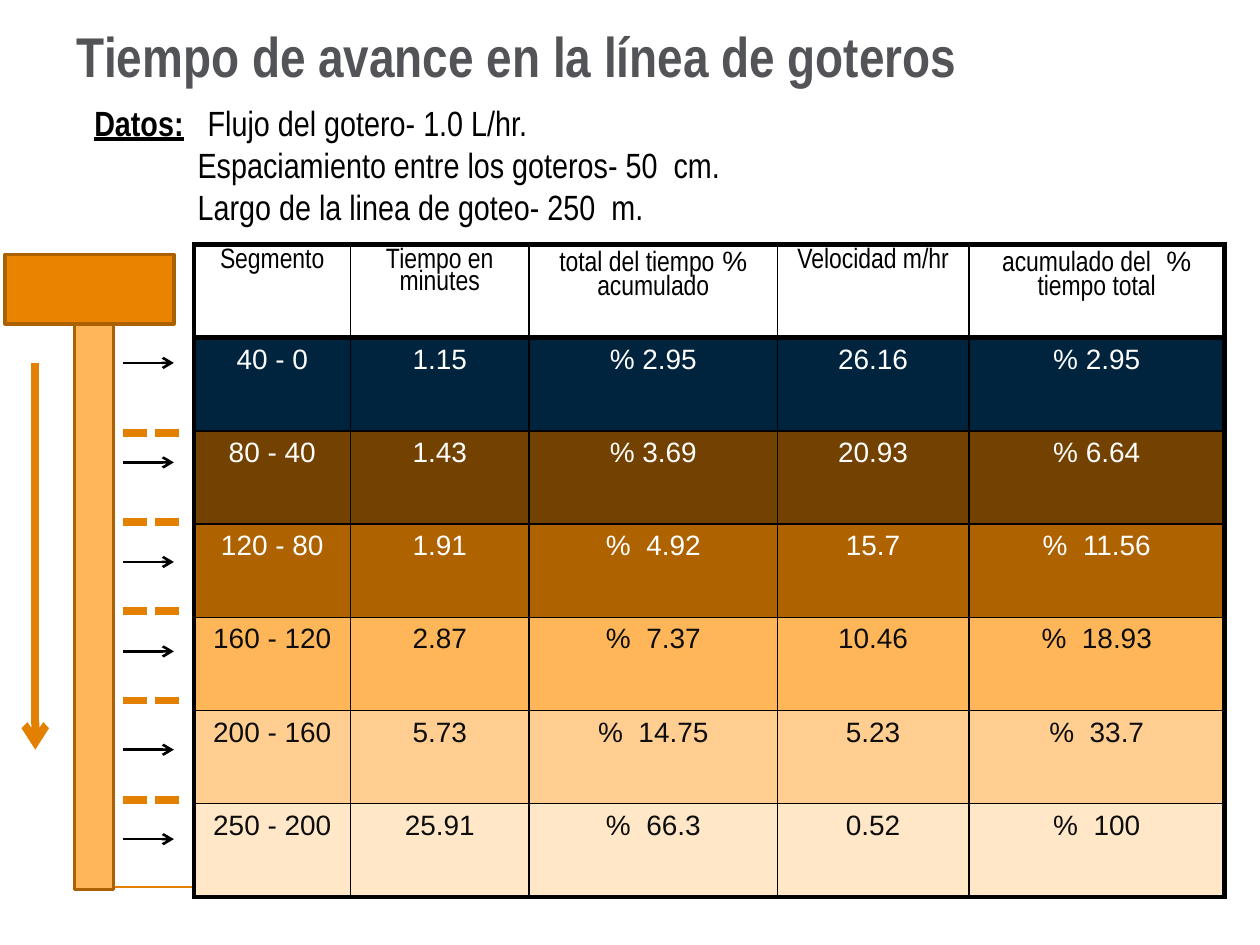
import pptx
import pptx.dml.color
import pptx.enum.dml
import pptx.enum.shapes
import pptx.enum.text
import pptx.oxml
import pptx.oxml.ns
import pptx.util
from lxml import etree
from pptx.util import Inches

qn = pptx.oxml.ns.qn
FONT = "Arial Narrow"
COLORS = {
    "title": "525457", "black": "000000", "white": "FFFFFF", "ink": "0D0D0D",
    "orange": "E48000", "tank": "E98300", "pipe": "FFB659", "outline": "AC6100",
}
HEADERS = ["Segmento", "Tiempo en minutes", "% total del tiempo acumulado",
           "Velocidad m/hr", "%  acumulado del tiempo total"]
# Row fill, text colour, values
SEGMENTS = [
    ("00233E", "white", ["0 - 40", "1.15", "2.95 %", "26.16", "2.95 %"]),
    ("744200", "white", ["40 - 80", "1.43", "3.69 %", "20.93", "6.64 %"]),
    ("AF6200", "white", ["80 - 120", "1.91", "4.92  %", "15.7", "11.56  %"]),
    ("FFB659", "ink", ["120 - 160", "2.87", "7.37  %", "10.46", "18.93  %"]),
    ("FFCE90", "ink", ["160 - 200", "5.73", "14.75  %", "5.23", "33.7  %"]),
    ("FFE7C8", "ink", ["200 - 250", "25.91", "66.3  %", "0.52", "100  %"]),
]
COLUMN_WIDTHS = [1.24, 1.42, 1.97, 1.52, 2.03]
ROW_HEIGHT = 0.74


def rgb(name):
    return pptx.dml.color.RGBColor.from_string(COLORS.get(name, name))


def format_font(font, color, **values):
    for key, value in {"name": FONT, **values}.items():
        setattr(font, key, value)
    font.color.rgb = rgb(color)


def add_line(slide, start, end, color, width, dash=None, arrow=False):
    line = slide.shapes.add_connector(
        pptx.enum.shapes.MSO_CONNECTOR.STRAIGHT,
        *(Inches(value) for value in (*start, *end)))
    line.line.color.rgb = rgb(color)
    line.line.width = pptx.util.Pt(width)
    if dash:
        line.line.dash_style = dash
    if arrow:
        etree.SubElement(line.line._get_or_add_ln(), qn("a:tailEnd"), type="arrow")
    etree.SubElement(line._element.spPr, qn("a:effectLst"))


def add_block(slide, left, top, width, height, fill):
    block = slide.shapes.add_shape(
        pptx.enum.shapes.MSO_SHAPE.RECTANGLE,
        *(Inches(value) for value in (left, top, width, height)))
    block.shadow.inherit = False
    block.fill.solid()
    block.fill.fore_color.rgb = rgb(fill)
    block.line.color.rgb = rgb("outline")
    block.line.width = pptx.util.Pt(2)


def place_title(slide, left, top, width, height):
    title = slide.shapes.title
    box = {"left": left, "top": top, "width": width, "height": height}
    for side, value in box.items():
        setattr(title, side, Inches(value))
    frame = title.text_frame
    frame.text = "Tiempo de avance en la línea de goteros"
    frame.word_wrap = True
    frame.auto_size = pptx.enum.text.MSO_AUTO_SIZE.NONE
    frame.vertical_anchor = pptx.enum.text.MSO_ANCHOR.TOP
    heading = frame.paragraphs[0]
    heading.alignment = pptx.enum.text.PP_ALIGN.LEFT
    format_font(heading.runs[0].font, "title", size=pptx.util.Pt(32), bold=True)


def add_data(slide, left, top, width, height):
    """Label followed by three givens, the later ones indented under the first."""
    frame = slide.shapes.add_textbox(
        *(Inches(value) for value in (left, top, width, height))).text_frame
    frame.word_wrap = True
    size = pptx.util.Pt(20)
    givens = ["\tFlujo del gotero- 1.0 L/hr.",
              "Espaciamiento entre los goteros- 50  cm.",
              "Largo de la linea de goteo- 250  m."]
    for index, given in enumerate(givens):
        paragraph = frame.add_paragraph() if index else frame.paragraphs[0]
        properties = paragraph._p.get_or_add_pPr()
        if index:
            properties.set("marL", str(Inches(0.82)))
            properties.set("indent", "0")
        else:
            stops = etree.SubElement(properties, qn("a:tabLst"))
            etree.SubElement(stops, qn("a:tab"), pos=str(Inches(0.9)), algn="l")
            label = paragraph.add_run()
            label.text = "Datos:"
            format_font(label.font, "black", size=size, bold=True, underline=True)
        run = paragraph.add_run()
        run.text = given
        format_font(run.font, "black", size=size)


def set_borders(cell, widths):
    properties = cell._tc.get_or_add_tcPr()
    for side, width in widths.items():
        border = etree.SubElement(properties, qn(f"a:ln{side}"),
                                  w=str(pptx.util.Pt(width)))
        fill = etree.SubElement(border, qn("a:solidFill"))
        etree.SubElement(fill, qn("a:srgbClr"), val=COLORS["black"])


def fill_cell(cell, text, color, fill):
    """Centred right-to-left text; digits and signs take the complex-script font."""
    if fill:
        cell.fill.solid()
        cell.fill.fore_color.rgb = rgb(fill)
    else:
        cell.fill.background()
    paragraph = cell.text_frame.paragraphs[0]
    paragraph.alignment = pptx.enum.text.PP_ALIGN.CENTER
    paragraph._p.get_or_add_pPr().set("rtl", "1")
    if not fill:
        paragraph.line_spacing = 0.85
    run = paragraph.add_run()
    run.text = text
    format_font(run.font, color, size=pptx.util.Pt(16))
    etree.SubElement(run._r.get_or_add_rPr(), qn("a:cs"), typeface="Arial")


def add_segment_table(slide, left, top):
    rows = [(None, "black", HEADERS), *SEGMENTS]
    last_row, last_column = len(rows) - 1, len(HEADERS) - 1
    table = slide.shapes.add_table(
        len(rows), len(HEADERS), Inches(left), Inches(top),
        Inches(sum(COLUMN_WIDTHS)), Inches(ROW_HEIGHT * len(rows))).table
    table.first_row = table.horz_banding = False
    for column, width in zip(table.columns, COLUMN_WIDTHS):
        column.width = Inches(width)
    for r, (fill, color, values) in enumerate(rows):
        table.rows[r].height = Inches(ROW_HEIGHT)
        for c, value in enumerate(values):
            cell = table.cell(r, c)
            set_borders(cell, {
                "L": 3 if c == 0 else 1,
                "R": 3 if c == last_column else 1,
                "T": 3 if r <= 1 else 1,
                "B": 3 if r in (0, last_row) else 1,
            })
            fill_cell(cell, value, color, fill)


def add_drip_line(slide, left, top):
    """Tank, pipe, segment limits and flow arrows."""
    add_block(slide, left + 0.55, top + 0.55, 0.31, 4.49, "pipe")
    add_block(slide, left, top, 1.34, 0.55, "tank")
    outlet = left + 0.94
    for limit in (1.42, 2.12, 2.83, 3.54, 4.33):
        add_line(slide, (outlet, top + limit), (outlet + 0.48, top + limit), "orange",
                 4.5, dash=pptx.enum.dml.MSO_LINE.SQUARE_DOT)
    for drip in (0.86, 1.65, 2.44, 3.15, 3.93, 4.64):
        add_line(slide, (outlet, top + drip), (outlet + 0.4, top + drip), "black",
                 1.5, arrow=True)
    add_line(slide, (left + 0.24, top + 0.86), (left + 0.24, top + 3.93), "orange",
             4.5, arrow=True)


def main():
    deck = pptx.Presentation()
    deck.slide_width, deck.slide_height = Inches(10), Inches(7.5)
    slide = deck.slides.add_slide(deck.slide_layouts[5])
    add_line(slide, (0.8, 7.04), (8.13, 7.04), "orange", 0.75)
    add_segment_table(slide, 1.54, 1.94)
    place_title(slide, 0.51, 0.12, 7.67, 0.64)
    add_data(slide, 0.65, 0.76, 5.64, 1.11)
    add_drip_line(slide, 0.04, 2.02)
    deck.save("out.pptx")


if __name__ == "__main__":
    main()
